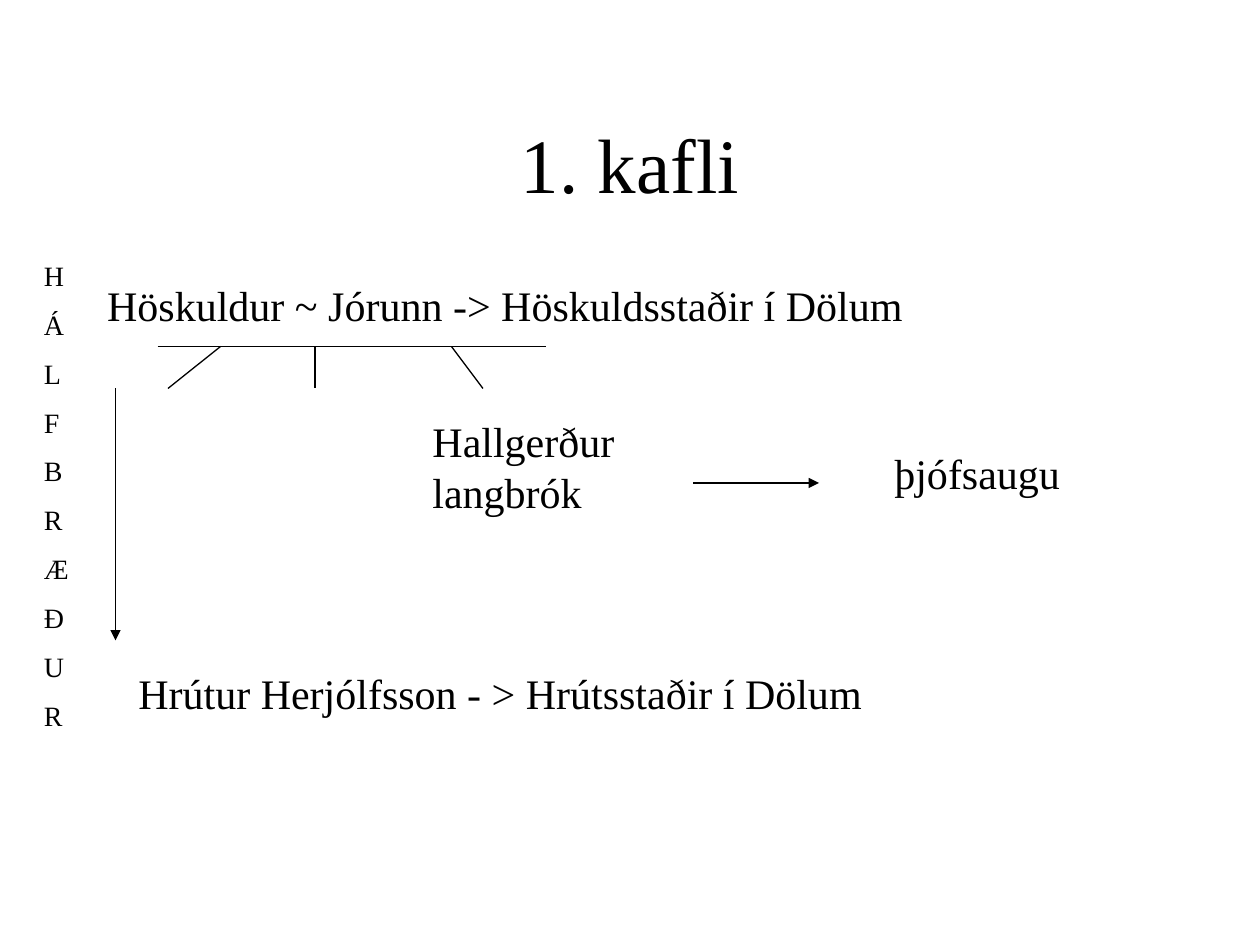
from lxml.etree import SubElement
from pptx import Presentation
from pptx.dml.color import RGBColor
from pptx.enum.shapes import MSO_CONNECTOR as CONN
from pptx.enum.text import MSO_ANCHOR, MSO_AUTO_SIZE, PP_ALIGN
from pptx.oxml.ns import qn
from pptx.util import Inches, Pt

COLORS = {"ink": "000000", "paper": "FFFFFF"}
FONT = "Times New Roman"
U = Inches(1) // 12  # grid of 120 columns by 90 rows

prs = Presentation()
prs.slide_width, prs.slide_height = 120 * U, 90 * U
s = prs.slides.add_slide(prs.slide_layouts[1])
s.background.fill.solid()
s.background.fill.fore_color.rgb = RGBColor.from_string(COLORS["paper"])


def write(sp, box, text, size):
    """Place a shape on the grid and fill it with formatted text."""
    sp.left, sp.top, sp.width, sp.height = (int(v * U) for v in box)
    tf = sp.text_frame
    tf.word_wrap = True
    tf.text = text
    for p in tf.paragraphs:
        for r in p.runs:
            r.font.size, r.font.name = Pt(size), FONT
            r.font.color.rgb = RGBColor.from_string(COLORS["ink"])
    return tf


def draw_line(x1, y1, x2, y2, arrow=False):
    """Draw a thin line between two grid points."""
    c = s.shapes.add_connector(CONN.STRAIGHT, x1 * U, y1 * U, x2 * U, y2 * U)
    c.line.width = Pt(0.75)
    c.line.color.rgb = RGBColor.from_string(COLORS["ink"])
    if arrow:
        SubElement(c.line._get_or_add_ln(), qn("a:tailEnd"), type="triangle")
    SubElement(c._element.spPr, qn("a:effectLst"))


# Title
tf = write(s.shapes.title, (9, 8, 102, 15), "1. kafli", 44)
tf.vertical_anchor = MSO_ANCHOR.MIDDLE
tf.paragraphs[0].alignment = PP_ALIGN.CENTER

# The couple, as an unbulleted body line
tf = write(s.placeholders[1], (9, 26, 102, 6),
           "Höskuldur ~ Jórunn -> Höskuldsstaðir í Dölum", 24)
tf.auto_size = MSO_AUTO_SIZE.NONE
SubElement(tf.paragraphs[0]._p.get_or_add_pPr(), qn("a:buNone"))

# Family tree: a bar with three branches to the children
draw_line(15, 33, 52, 33)
for top_x, bottom_x in ((21, 16), (30, 30), (43, 46)):
    draw_line(top_x, 33, bottom_x, 37)

# Arrows to the nickname and to the half-brother
draw_line(66, 46, 78, 46, arrow=True)
draw_line(11, 37, 11, 61, arrow=True)

# Labels, the last one spelled downwards
labels = [
    ((40, 39, 22, 10.8), "Hallgerður langbrók", 24),
    ((84, 42, 24, 6), "þjófsaugu", 24),
    ((12, 63, 85, 6), "Hrútur Herjólfsson - > Hrútsstaðir í Dölum", 24),
    ((3, 24, 5, 47.8), "\n".join("HÁLFBRÆÐUR"), 16),
]
for box, text, size in labels:
    tf = write(s.shapes.add_textbox(0, 0, U, U), box, text, size)
    tf.auto_size = MSO_AUTO_SIZE.SHAPE_TO_FIT_TEXT
    for p in tf.paragraphs[1:]:
        p.space_before = Pt(0.55 * size)

prs.save("out.pptx")
